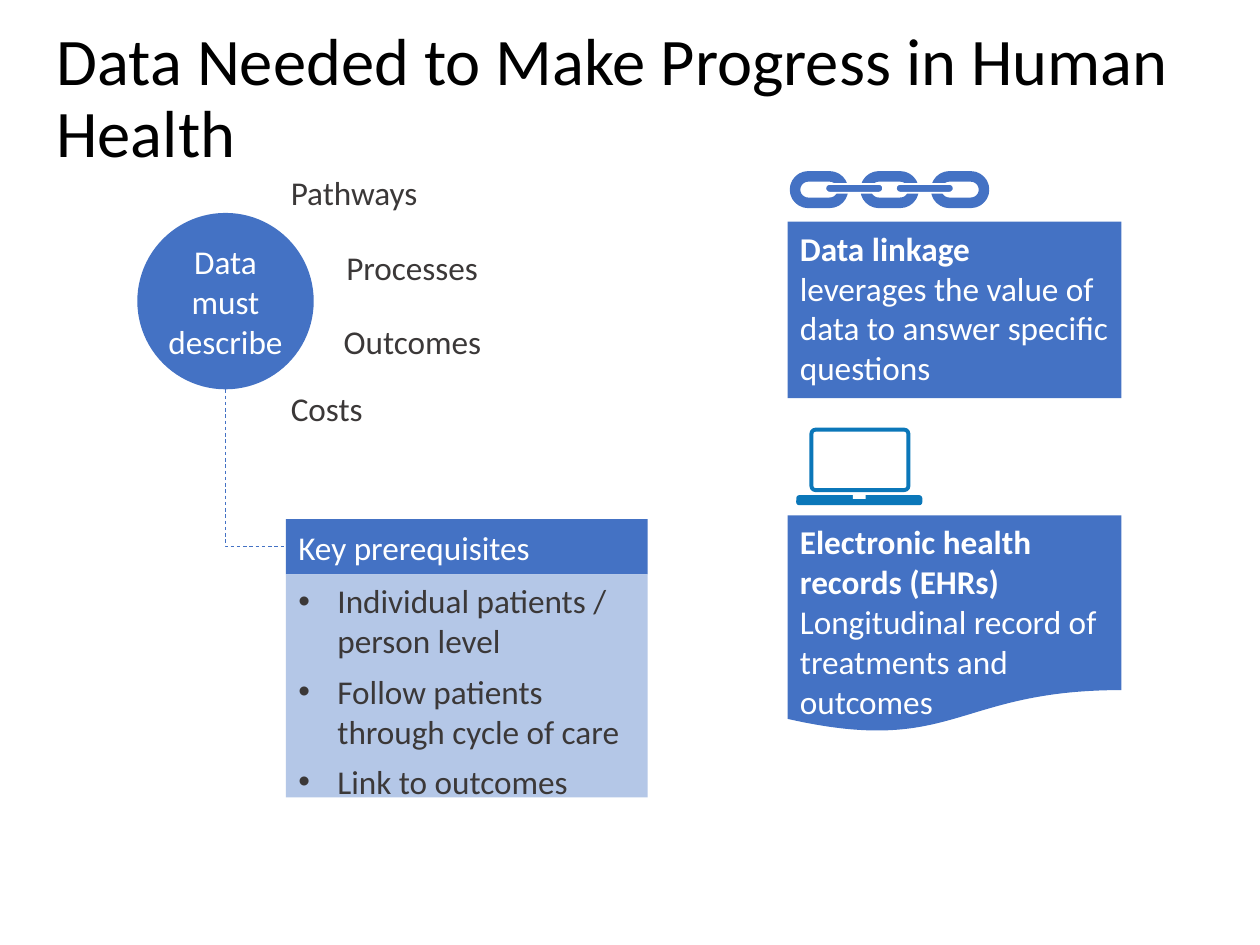
import dataclasses

import lxml.etree
import pptx
import pptx.dml.color
import pptx.enum.dml
import pptx.enum.shapes
import pptx.enum.text
import pptx.oxml.ns
import pptx.util

Inches = pptx.util.Inches
Pt = pptx.util.Pt
Shape = pptx.enum.shapes.MSO_SHAPE
Anchor = pptx.enum.text.MSO_ANCHOR
Align = pptx.enum.text.PP_ALIGN
qn = pptx.oxml.ns.qn


@dataclasses.dataclass(frozen=True)
class Theme:
    font: str = "Calibri"
    title_size: int = 38
    body_size: int = 19
    blue: str = "4472C4"
    pale: str = "B4C7E7"
    laptop: str = "0B77B9"
    dark: str = "3B3838"
    black: str = "000000"
    white: str = "FFFFFF"


THEME = Theme()


def rgb(value):
    return pptx.dml.color.RGBColor.from_string(value)


def add_block(page, kind, left, top, width, height, fill=None, line=None, line_width=0, round_by=None):
    block = page.shapes.add_shape(kind, Inches(left), Inches(top), Inches(width), Inches(height))
    block.shadow.inherit = False
    if fill:
        block.fill.solid()
        block.fill.fore_color.rgb = rgb(fill)
    else:
        block.fill.background()
    if line:
        block.line.color.rgb = rgb(line)
        block.line.width = Pt(line_width)
    else:
        block.line.fill.background()
    if round_by is not None:
        block.adjustments[0] = round_by
    return block


def add_label(page, left, top, width, height):
    return page.shapes.add_textbox(Inches(left), Inches(top), Inches(width), Inches(height))


def add_bullet(para):
    properties = para._p.get_or_add_pPr()
    properties.set("marL", str(Inches(0.31)))
    properties.set("indent", str(Inches(-0.31)))
    lxml.etree.SubElement(properties, qn("a:buFont")).set("typeface", "Arial")
    lxml.etree.SubElement(properties, qn("a:buChar")).set("char", "•")
    para.space_after = Pt(6)


def write(box, lines, color, size=THEME.body_size, align=Align.LEFT, anchor=Anchor.TOP,
          bold_first=False, bullets=False):
    frame = box.text_frame
    frame.word_wrap = True
    frame.vertical_anchor = anchor
    for index, line in enumerate(lines):
        para = frame.add_paragraph() if index else frame.paragraphs[0]
        para.alignment = align
        if bullets:
            add_bullet(para)
        span = para.add_run()
        span.text = line
        span.font.name = THEME.font
        span.font.size = Pt(size)
        span.font.bold = bold_first and index == 0
        span.font.color.rgb = rgb(color)
    return frame


def build_title(page, left, top, width, height):
    box = add_label(page, left, top, width, height)
    frame = write(box, ["Data Needed to Make Progress in Human Health"], THEME.black,
                  THEME.title_size, anchor=Anchor.MIDDLE)
    frame.paragraphs[0].line_spacing = 0.9


def build_description(page, left, top, size):
    circle = add_block(page, Shape.OVAL, left, top, size, size, THEME.blue)
    frame = write(circle, ["Data must describe"], THEME.white, align=Align.CENTER, anchor=Anchor.MIDDLE)
    frame.margin_left = frame.margin_right = Inches(0.04)
    frame.margin_top = frame.margin_bottom = Inches(0.04)
    topics = [("Pathways", 1.12, -0.37), ("Processes", 1.56, 0.22),
              ("Outcomes", 1.54, 0.81), ("Costs", 1.12, 1.34)]
    for topic, across, down in topics:
        write(add_label(page, left + across, top + down, 1.6, 0.42), [topic], THEME.dark)


def build_prerequisites(page, left, top, width, height):
    header_height = 0.44
    header = add_block(page, Shape.RECTANGLE, left, top, width, header_height, THEME.blue)
    write(header, ["Key prerequisites"], THEME.white, anchor=Anchor.MIDDLE)
    body = add_block(page, Shape.RECTANGLE, left, top + header_height, width,
                     height - header_height, THEME.pale)
    write(body, ["Individual patients / person level", "Follow patients through cycle of care",
                 "Link to outcomes"], THEME.dark, bullets=True)


def build_elbow(page, left, top, width, height):
    elbow = page.shapes.add_connector(
        pptx.enum.shapes.MSO_CONNECTOR.ELBOW,
        Inches(left + (width - height) / 2), Inches(top + (height - width) / 2),
        Inches(left + (width + height) / 2), Inches(top + (height + width) / 2))
    elbow.line.color.rgb = rgb(THEME.blue)
    elbow.line.width = Pt(0.5)
    elbow.line.dash_style = pptx.enum.dml.MSO_LINE.DASH
    properties = elbow._element.spPr
    lxml.etree.SubElement(properties, qn("a:effectLst"))
    properties.find(qn("a:prstGeom")).set("prst", "bentConnector2")
    turn = properties.find(qn("a:xfrm"))
    turn.set("rot", str(270 * 60000))
    turn.set("flipH", "1")


def build_chain(page, left, top, link_width, link_height):
    pitch = 0.56
    for index in range(3):
        add_block(page, Shape.ROUNDED_RECTANGLE, left + index * pitch, top, link_width, link_height,
                  line=THEME.blue, line_width=6, round_by=0.5)
    for index in range(2):
        add_block(page, Shape.ROUNDED_RECTANGLE, left + 0.24 + index * pitch, top + 0.06, 0.46, 0.07,
                  THEME.blue, THEME.white, 1, 0.5)


def build_laptop(page, left, top, width, height):
    add_block(page, Shape.ROUNDED_RECTANGLE, left + 0.12, top, width - 0.23, height - 0.12,
              THEME.white, THEME.laptop, 2.25, 0.07)
    add_block(page, Shape.ROUNDED_RECTANGLE, left, top + height - 0.08, width, 0.08,
              THEME.laptop, round_by=0.3)
    add_block(page, Shape.RECTANGLE, left + (width - 0.1) / 2, top + height - 0.09, 0.1, 0.04,
              THEME.white)


def build_card(page, kind, left, top, width, height, heading, detail):
    card = add_block(page, kind, left, top, width, height, THEME.blue)
    write(card, [heading, detail], THEME.white, bold_first=True)


def main():
    deck = pptx.Presentation()
    deck.slide_width = Inches(10)
    deck.slide_height = Inches(7.5)
    page = deck.slides.add_slide(deck.slide_layouts[6])
    build_description(page, 1.09, 1.69, 1.4)
    build_prerequisites(page, 2.27, 4.12, 2.87, 2.21)
    build_elbow(page, 1.79, 3.09, 0.48, 1.25)
    build_chain(page, 6.31, 1.4, 0.38, 0.21)
    build_card(page, Shape.RECTANGLE, 6.25, 1.76, 2.65, 1.4, "Data linkage",
               "leverages the value of data to answer specific questions")
    build_card(page, Shape.FLOWCHART_DOCUMENT, 6.25, 4.09, 2.65, 1.73,
               "Electronic health records (EHRs)",
               "Longitudinal record of treatments and outcomes")
    build_laptop(page, 6.32, 3.41, 1, 0.6)
    build_title(page, 0.35, 0.07, 9.46, 1.45)
    deck.save("out.pptx")


if __name__ == "__main__":
    main()
